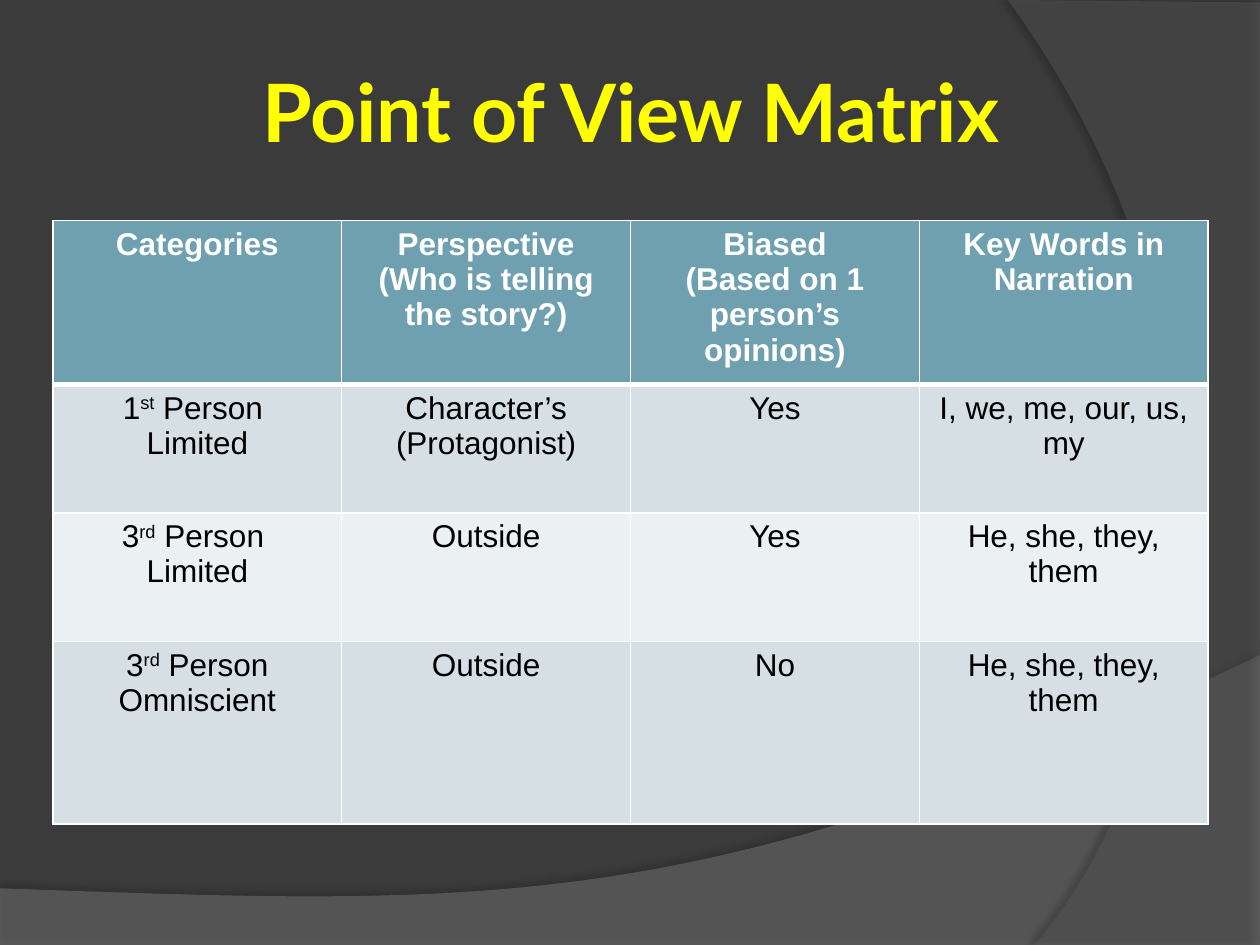
import lxml.etree
import pptx
import pptx.dml.color
import pptx.enum.text
import pptx.oxml
import pptx.oxml.ns
import pptx.util

EMU_PER_PX = 9144
CURVE_STEPS = 40
NAMESPACE = pptx.oxml.ns.nsdecls("a")

HEADER = [
    ["Categories"],
    ["Perspective", "(Who is telling the story?)"],
    ["Biased", "(Based on 1 person’s opinions)"],
    ["Key Words in Narration"],
]
BODY = [
    [["1^st^ Person ", "Limited"], ["Character’s (Protagonist)"], ["Yes"], ["I, we, me, our, us, my"]],
    [["3^rd^ Person ", "Limited"], ["Outside"], ["Yes"], ["He, she, they, them"]],
    [["3^rd^ Person Omniscient"], ["Outside"], ["No"], ["He, she, they, them"]],
]


def px(length):
    return pptx.util.Emu(round(length * EMU_PER_PX))


def color(value):
    return pptx.dml.color.RGBColor.from_string(value)


def style_paragraph(paragraph, name, size, value, bold):
    paragraph.alignment = pptx.enum.text.PP_ALIGN.CENTER
    paragraph.font.name = name
    paragraph.font.size = pptx.util.Pt(size)
    paragraph.font.bold = bold
    paragraph.font.color.rgb = color(value)


def curve(start, first, second, end):
    points = []
    for step in range(CURVE_STEPS + 1):
        t = step / CURVE_STEPS
        weights = ((1 - t) ** 3, 3 * t * (1 - t) ** 2, 3 * t**2 * (1 - t), t**3)
        corners = (start, first, second, end)
        points.append(tuple(sum(w * corner[axis] for w, corner in zip(weights, corners)) for axis in (0, 1)))
    return points


def add_band(slide, box, outline, fill, opacity, shadow_opacity, distance, direction):
    left, top = box
    points = [(px(left + x), px(top + y)) for x, y in outline]
    builder = slide.shapes.build_freeform(*points[0], scale=1.0)
    builder.add_line_segments(points[1:], close=True)
    shape = builder.convert_to_shape()
    shape.fill.solid()
    shape.fill.fore_color.rgb = color(fill)
    shape.line.fill.background()
    properties = shape._element.spPr
    fill_color = properties.find(".//" + pptx.oxml.ns.qn("a:srgbClr"))
    lxml.etree.SubElement(fill_color, pptx.oxml.ns.qn("a:alpha"), val=str(opacity * 1000))
    properties.append(pptx.oxml.parse_xml(
        f'<a:effectLst {NAMESPACE}><a:outerShdw blurRad="{pptx.util.Pt(4)}" '
        f'dist="{pptx.util.Pt(distance)}" dir="{direction * 60000}" algn="ctr" rotWithShape="0">'
        f'<a:srgbClr val="000000"><a:alpha val="{shadow_opacity * 1000}"/></a:srgbClr>'
        '</a:outerShdw></a:effectLst>'
    ))


def add_backdrop(slide):
    slide.background.fill.solid()
    slide.background.fill.fore_color.rgb = color("3B3B3B")
    lower_wave = [(0, 231), (1000, 231)] + curve((1000, 0), (559, 209), (391, 199), (0, 185))
    right_arc = [(200, 2), (200, 750)] + curve((21, 750), (135, 619), (218, 300), (0, 0))
    add_band(slide, (0, 520), lower_wave, "7F7F7F", 45, 35, 3.5, 270)
    add_band(slide, (800, 0), right_arc, "5E5E5E", 40, 45, 4, 180)


def add_title(slide, box, text):
    frame = slide.shapes.add_textbox(*map(px, box)).text_frame
    frame.word_wrap = True
    frame.vertical_anchor = pptx.enum.text.MSO_ANCHOR.MIDDLE
    frame.margin_left = frame.margin_right = px(5)
    frame.margin_top = frame.margin_bottom = px(5)
    frame.text = text
    style_paragraph(frame.paragraphs[0], "Lato", 46, "FFFF00", True)


def add_borders(cell, widths):
    properties = cell._tc.get_or_add_tcPr()
    for side, width in zip("LRTB", widths):
        properties.append(pptx.oxml.parse_xml(
            f'<a:ln{side} {NAMESPACE} w="{pptx.util.Pt(width)}"><a:solidFill>'
            f'<a:srgbClr val="FFFFFF"/></a:solidFill></a:ln{side}>'
        ))


def fill_cell(cell, lines, fill, text_color, bold, border_widths):
    add_borders(cell, border_widths)
    cell.fill.solid()
    cell.fill.fore_color.rgb = color(fill)
    frame = cell.text_frame
    for index, line in enumerate(lines):
        paragraph = frame.add_paragraph() if index else frame.paragraphs[0]
        style_paragraph(paragraph, "Arial", 18, text_color, bold)
        for position, part in enumerate(line.split("^")):
            run = paragraph.add_run()
            run.text = part
            if position % 2:
                run._r.get_or_add_rPr().set("baseline", "30000")


def add_matrix(slide, box):
    rows = [HEADER] + BODY
    table = slide.shapes.add_table(len(rows), len(HEADER), *map(px, box)).table
    table.horz_banding = False
    for column in table.columns:
        column.width = px(box[2] / len(HEADER))
    for row, height in zip(table.rows, (102, 102, 102, 145)):
        row.height = px(height)
    for row_index, row in enumerate(rows):
        if row_index == 0:
            look = ("6EA0B0", "FFFFFF", True, (1, 1, 1, 3))
        else:
            fill = "D5DFE4" if row_index % 2 else "EBF0F2"
            look = (fill, "000000", False, (1, 1, 3 if row_index == 1 else 1, 1))
        for column_index, lines in enumerate(row):
            fill_cell(table.cell(row_index, column_index), lines, *look)


def main():
    presentation = pptx.Presentation()
    presentation.slide_width = px(1000)
    presentation.slide_height = px(750)
    slide = presentation.slides.add_slide(presentation.slide_layouts[6])
    add_backdrop(slide)
    add_title(slide, (92, 25, 817, 125), "Point of View Matrix")
    add_matrix(slide, (42, 175, 917, 451))
    presentation.save("out.pptx")


if __name__ == "__main__":
    main()
